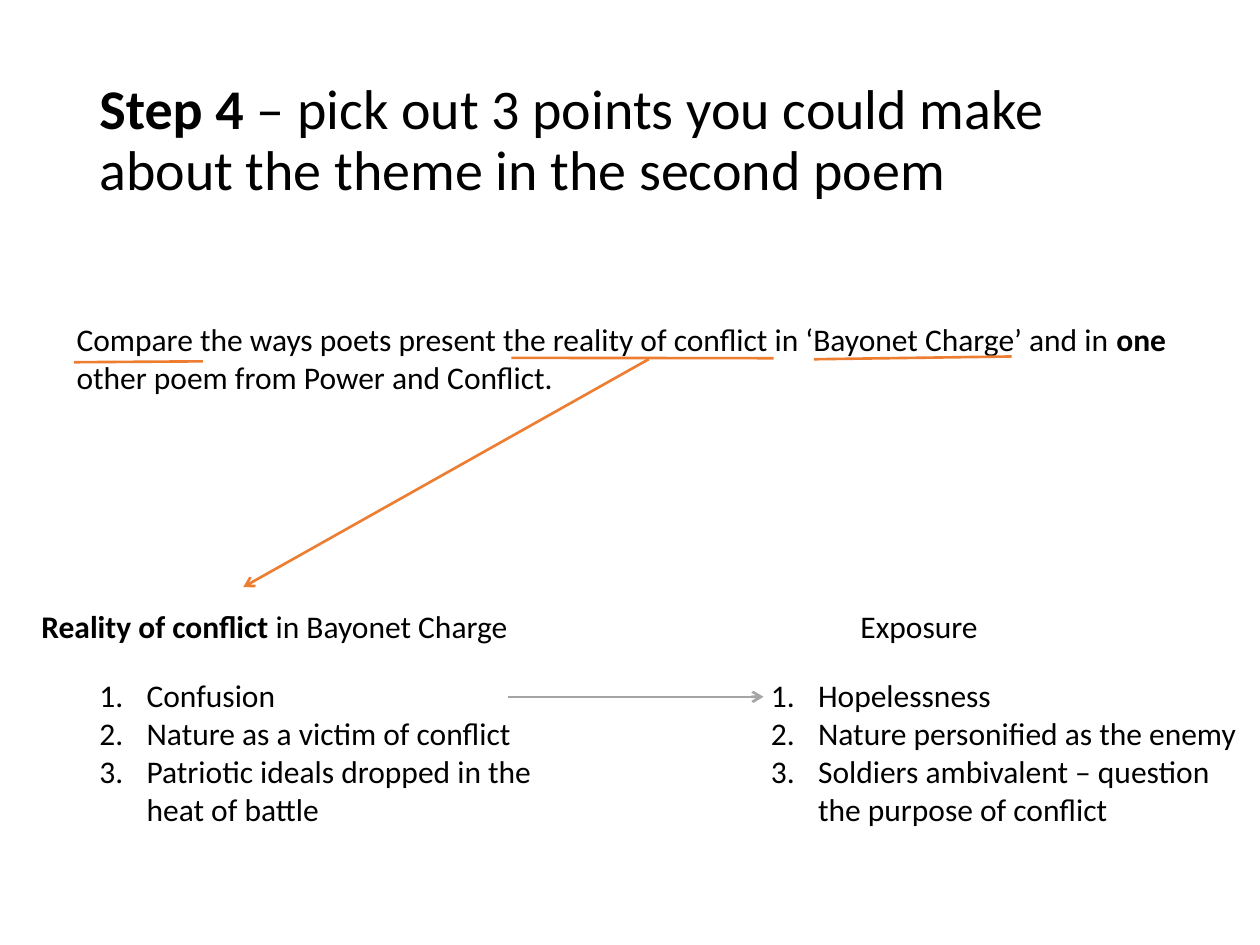
from dataclasses import dataclass

from lxml import etree
from pptx import Presentation
from pptx import util as u
from pptx.dml.color import RGBColor
from pptx.enum import shapes, text
from pptx.oxml import ns


@dataclass(frozen=True)
class Theme:
    font: str = "Calibri"
    ink: str = "000000"
    mark: str = "ED7D31"
    link: str = "A5A5A5"
    title: int = 32
    body: int = 18
    line: float = 1.5
    indent: float = 27


THEME = Theme()


def add_text(slide, box, paras, size, wrap=True):
    frame = slide.shapes.add_textbox(*map(u.Pt, box)).text_frame
    frame.word_wrap = wrap
    for i, parts in enumerate(paras):
        para = frame.add_paragraph() if i else frame.paragraphs[0]
        for words, bold in parts:
            run = para.add_run()
            run.text = words
            font = run.font
            font.name, font.size, font.bold = THEME.font, u.Pt(size), bold
            font.color.rgb = RGBColor.from_string(THEME.ink)
    return frame


def add_line(slide, start, end, color, arrow=False):
    line = slide.shapes.add_connector(
        shapes.MSO_CONNECTOR.STRAIGHT, *map(u.Pt, (*start, *end)))
    line.line.color.rgb = RGBColor.from_string(color)
    line.line.width = u.Pt(THEME.line)
    if arrow:
        stroke = line.line._get_or_add_ln()
        etree.SubElement(stroke, ns.qn("a:tailEnd"), type="arrow")
    etree.SubElement(line._element.spPr, ns.qn("a:effectLst"))


def add_title(slide, box):
    parts = [("Step 4 ", True),
             ("– pick out 3 points you could make about the theme "
              "in the second poem", False)]
    frame = add_text(slide, box, [parts], THEME.title)
    frame.vertical_anchor = text.MSO_ANCHOR.MIDDLE
    frame.paragraphs[0].line_spacing = 0.9


def add_task(slide, box):
    parts = [("Compare the ways poets present the reality of conflict in "
              "‘Bayonet Charge’ and in ", False),
             ("one", True),
             (" other poem from Power and Conflict.", False)]
    add_text(slide, box, [parts], THEME.body)
    left, top = box[:2]
    for x1, y1, x2, y2 in ((5.6, 27.7, 79.2, 27.2),
                           (255.6, 25.2, 405.4, 25.4),
                           (428.4, 26, 541.4, 24.4)):
        add_line(slide, (left + x1, top + y1), (left + x2, top + y2),
                 THEME.mark)


def add_poem(slide, box, head, width, shift, points):
    left, top, wide, high = box
    add_text(slide, (left + shift, top, width, 29), [head],
             THEME.body, wrap=False)
    frame = add_text(slide, (left, top + 39.6, wide, high - 39.6),
                     [[(point, False)] for point in points], THEME.body)
    for para in frame.paragraphs:
        props = para._p.get_or_add_pPr()
        props.set("marL", str(u.Pt(THEME.indent)))
        props.set("indent", str(-u.Pt(THEME.indent)))
        etree.SubElement(props, ns.qn("a:buFont"), typeface="+mj-lt")
        etree.SubElement(props, ns.qn("a:buAutoNum"), type="arabicPeriod")


def main():
    deck = Presentation()
    deck.slide_width, deck.slide_height = u.Pt(720), u.Pt(540)
    slide = deck.slides.add_slide(deck.slide_layouts[6])
    add_title(slide, (49.7, 28.8, 620.6, 104.4))
    add_task(slide, (36.7, 179.3, 660.2, 72.7))
    add_poem(slide, (49.7, 343.4, 267.8, 133.9),
             [("Reality of conflict ", True), ("in Bayonet Charge", False)],
             283.7, -33.1,
             ["Confusion", "Nature as a victim of conflict",
              "Patriotic ideals dropped in the heat of battle"])
    add_poem(slide, (433.4, 343.4, 281.5, 156.2),
             [("Exposure", False)], 82, 51.2,
             ["Hopelessness", "Nature personified as the enemy",
              "Soldiers ambivalent – question the purpose of conflict"])
    add_line(slide, (370.8, 205.2), (139, 335.5), THEME.mark, arrow=True)
    add_line(slide, (290.2, 398.2), (436.3, 398.2), THEME.link, arrow=True)
    deck.save("out.pptx")


if __name__ == "__main__":
    main()
